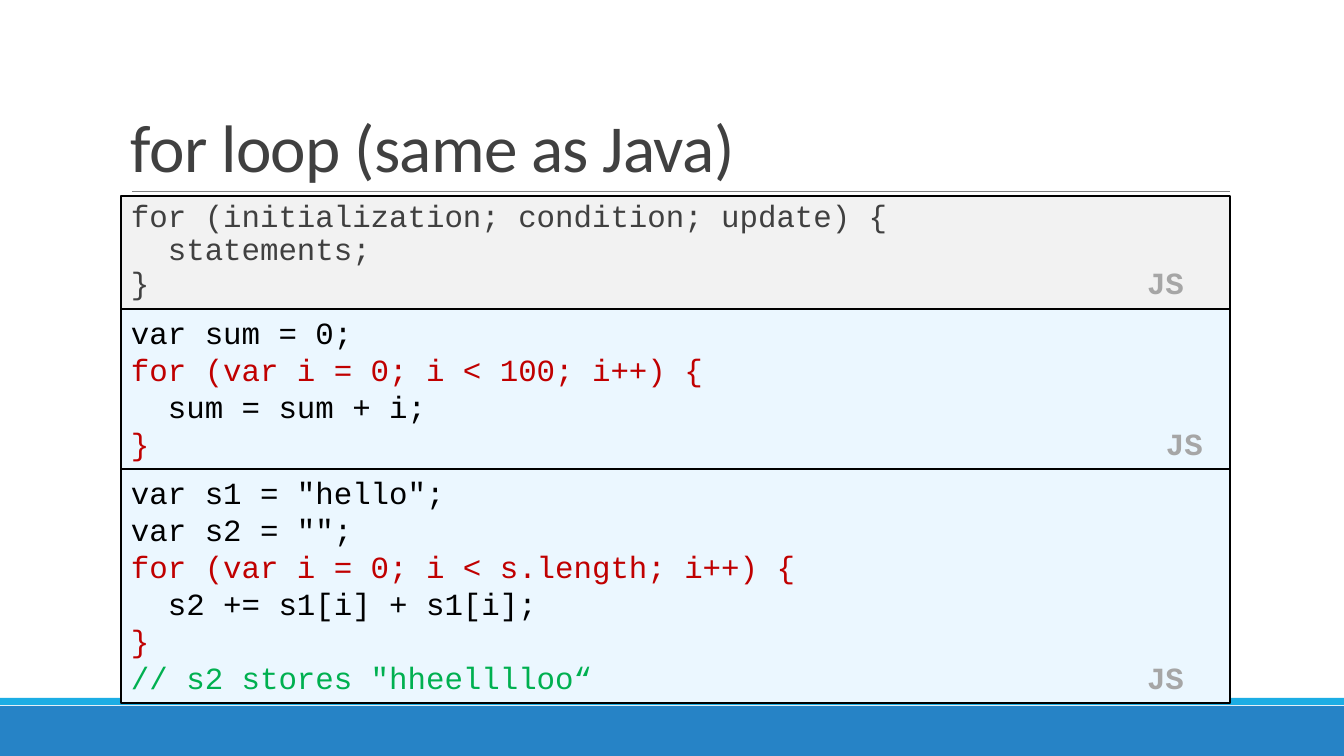
"""Build the slide that explains the JavaScript for loop."""
import pptx
import pptx.dml.color
import pptx.enum.shapes
import pptx.enum.text
import pptx.oxml.ns
import pptx.util
from lxml import etree

RGBColor = pptx.dml.color.RGBColor
BLACK = RGBColor(0x00, 0x00, 0x00)
WHITE = RGBColor(0xFF, 0xFF, 0xFF)
CHARCOAL = RGBColor(0x40, 0x40, 0x40)
RULE_GRAY = RGBColor(0x80, 0x80, 0x80)
LABEL_GRAY = RGBColor(0xA6, 0xA6, 0xA6)
SYNTAX_FILL = RGBColor(0xF2, 0xF2, 0xF2)
EXAMPLE_FILL = RGBColor(0xEB, 0xF7, 0xFF)
LOOP_RED = RGBColor(0xC0, 0x00, 0x00)
COMMENT_GREEN = RGBColor(0x00, 0xB0, 0x50)
FOOTER_BLUE = RGBColor(0x26, 0x83, 0xC6)
STRIPE_BLUE = RGBColor(0x1C, 0xAD, 0xE4)

PAGE_WIDTH, PAGE_HEIGHT = 1344, 756
CONTENT_LEFT, CONTENT_WIDTH = 121, 1109
INSET_X, INSET_Y = 10, 5

SYNTAX = [
    ("for (initialization; condition; update) {", CHARCOAL),
    ("  statements;", CHARCOAL),
    ("}", CHARCOAL),
]
SUM_EXAMPLE = [
    ("var sum = 0;", BLACK),
    ("for (var i = 0; i < 100; i++) {", LOOP_RED),
    ("  sum = sum + i;", BLACK),
    ("}", LOOP_RED),
]
STRING_EXAMPLE = [
    ('var s1 = "hello";', BLACK),
    ('var s2 = "";', BLACK),
    ("for (var i = 0; i < s.length; i++) {", LOOP_RED),
    ("  s2 += s1[i] + s1[i];", BLACK),
    ("}", LOOP_RED),
    ('// s2 stores "hheelllloo“', COMMENT_GREEN),
]


def px(length):
    """Turn pixels into EMU."""
    return pptx.util.Emu(round(length * 914400 / 100.8))


def add_rectangle(page, left, top, width, height, fill, line=None):
    """Add a flat rectangle with an optional outline."""
    box = page.shapes.add_shape(
        pptx.enum.shapes.MSO_SHAPE.RECTANGLE,
        px(left), px(top), px(width), px(height))
    box.shadow.inherit = False
    box.fill.solid()
    box.fill.fore_color.rgb = fill
    if line is None:
        box.line.fill.background()
    else:
        box.line.color.rgb = line
        box.line.width = pptx.util.Pt(1.5)
    return box


def set_up_text(box, anchor):
    """Set wrapping, insets and anchor, and return the text frame."""
    frame = box.text_frame
    frame.word_wrap = True
    frame.margin_left = frame.margin_right = px(INSET_X)
    frame.margin_top = frame.margin_bottom = px(INSET_Y)
    frame.vertical_anchor = anchor
    return frame


def add_span(para, text, font, size, color, bold=False):
    """Append one formatted run to a paragraph."""
    span = para.add_run()
    span.text = text
    span.font.name = font
    span.font.size = pptx.util.Pt(size)
    span.font.color.rgb = color
    span.font.bold = bold
    return span


def add_tab_stop(para, position):
    """Add a left tab stop to a paragraph."""
    properties = para._p.get_or_add_pPr()
    stops = etree.SubElement(properties, pptx.oxml.ns.qn("a:tabLst"))
    etree.SubElement(stops, pptx.oxml.ns.qn("a:tab"),
                     pos=str(px(position)), algn="l")


def add_code_panel(page, top, height, fill, lines, label_offset, spacing=1.0):
    """Add a framed code listing with a language label on its last line."""
    box = add_rectangle(page, CONTENT_LEFT, top, CONTENT_WIDTH, height,
                        fill, BLACK)
    frame = set_up_text(box, pptx.enum.text.MSO_ANCHOR.TOP)
    for index, (code, color) in enumerate(lines):
        para = frame.add_paragraph() if index else frame.paragraphs[0]
        para.alignment = pptx.enum.text.PP_ALIGN.LEFT
        para.line_spacing = spacing
        add_span(para, code, "Courier New", 22, color)
    add_tab_stop(para, label_offset)
    add_span(para, "\tJS", "Courier New", 22, LABEL_GRAY, bold=True)


def add_title(page, text):
    """Add the slide title, resting on the rule below it."""
    box = page.shapes.add_textbox(
        px(CONTENT_LEFT), px(31), px(CONTENT_WIDTH), px(160))
    frame = set_up_text(box, pptx.enum.text.MSO_ANCHOR.BOTTOM)
    para = frame.paragraphs[0]
    para.line_spacing = 0.85
    span = add_span(para, text, "Calibri", 48, CHARCOAL)
    span.font._element.set("spc", "-50")


def add_rule(page, left, right, top):
    """Add a thin horizontal line."""
    rule = page.shapes.add_connector(
        pptx.enum.shapes.MSO_CONNECTOR.STRAIGHT,
        px(left), px(top), px(right), px(top))
    rule.line.color.rgb = RULE_GRAY
    rule.line.width = pptx.util.Pt(0.5)
    etree.SubElement(rule._element.spPr, pptx.oxml.ns.qn("a:effectLst"))


def main():
    """Build and save the deck."""
    deck = pptx.Presentation()
    deck.slide_width, deck.slide_height = px(PAGE_WIDTH), px(PAGE_HEIGHT)
    page = deck.slides.add_slide(deck.slide_layouts[6])
    page.background.fill.solid()
    page.background.fill.fore_color.rgb = WHITE

    add_rectangle(page, 0, 706, PAGE_WIDTH, 50, FOOTER_BLUE)
    add_rectangle(page, 0, 698, PAGE_WIDTH, 7, STRIPE_BLUE)
    add_rule(page, 132, 1230, 191)
    add_title(page, "for loop (same as Java)")
    add_code_panel(page, 196, 113, SYNTAX_FILL, SYNTAX, 1016, spacing=0.9)
    add_code_panel(page, 309, 160, EXAMPLE_FILL, SUM_EXAMPLE, 1035)
    add_code_panel(page, 469, 234, EXAMPLE_FILL, STRING_EXAMPLE, 1016)
    deck.save("out.pptx")


if __name__ == "__main__":
    main()
